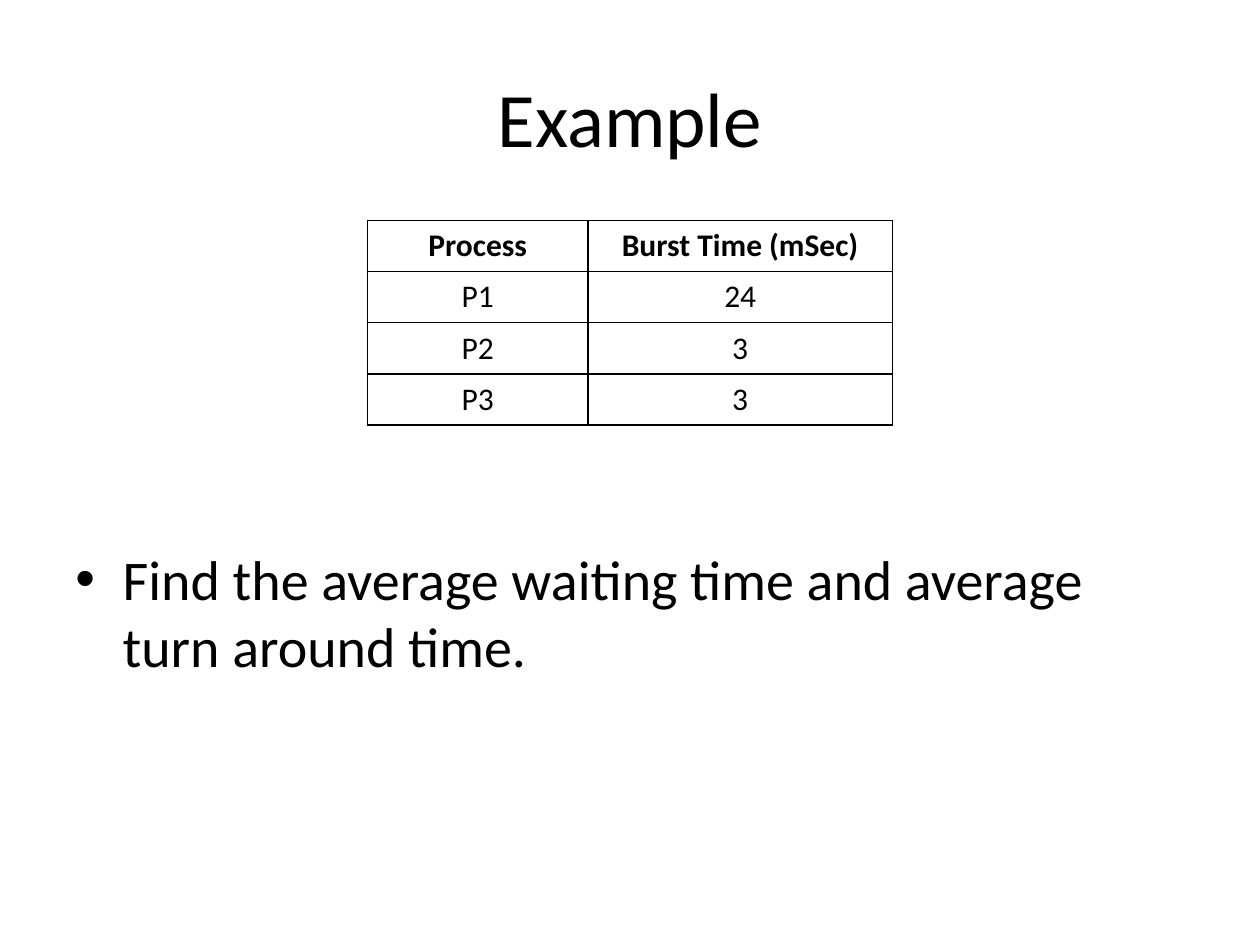
"""Build a scheduling example slide with a burst time table and a question."""
import pptx
import pptx.dml.color
import pptx.enum.text
import pptx.oxml
import pptx.oxml.ns
import pptx.util

Pt = pptx.util.Pt
CENTER = pptx.enum.text.PP_ALIGN.CENTER
MIDDLE = pptx.enum.text.MSO_ANCHOR.MIDDLE
BLACK = pptx.dml.color.RGBColor(0x00, 0x00, 0x00)
FONT = "Calibri"
NS = pptx.oxml.ns.nsdecls("a")
ROWS = [("Process", "Burst Time (mSec)"), ("P1", "24"), ("P2", "3"), ("P3", "3")]
COLUMN_WIDTHS = [126, 174]
ROW_HEIGHT = 29.2


def format_runs(p, size, bold=False):
    """Apply the slide font to every run of a paragraph."""
    for r in p.runs:
        r.font.name = FONT
        r.font.size = Pt(size)
        r.font.bold = bold
        r.font.color.rgb = BLACK


def add_borders(cell):
    """Draw a thin black line on all four sides of a cell."""
    tcPr = cell._tc.get_or_add_tcPr()
    for i, side in enumerate(("lnL", "lnR", "lnT", "lnB")):
        tcPr.insert(i, pptx.oxml.parse_xml(
            f'<a:{side} {NS} w="{Pt(1)}"><a:solidFill>'
            f'<a:srgbClr val="{BLACK}"/></a:solidFill></a:{side}>'))


prs = pptx.Presentation()
prs.slide_width, prs.slide_height = Pt(720), Pt(540)
s = prs.slides.add_slide(prs.slide_layouts[5])

title = s.shapes.title
title.left, title.top, title.width, title.height = Pt(36), Pt(21.6), Pt(648), Pt(90)
tf = title.text_frame
tf.text = "Example"
tf.vertical_anchor = MIDDLE
tf.paragraphs[0].alignment = CENTER
format_runs(tf.paragraphs[0], 44)

table = s.shapes.add_table(
    len(ROWS), len(COLUMN_WIDTHS), Pt(210), Pt(126),
    Pt(sum(COLUMN_WIDTHS)), Pt(ROW_HEIGHT * len(ROWS))).table
table.horz_banding = False
for column, width in zip(table.columns, COLUMN_WIDTHS):
    column.width = Pt(width)
for i, values in enumerate(ROWS):
    table.rows[i].height = Pt(ROW_HEIGHT)
    for j, value in enumerate(values):
        cell = table.cell(i, j)
        cell.fill.background()
        add_borders(cell)
        cell.text_frame.text = value
        p = cell.text_frame.paragraphs[0]
        p.alignment = CENTER
        format_runs(p, 18, bold=i == 0)

question = s.shapes.add_textbox(Pt(36), Pt(126), Pt(648), Pt(356.4))
tf = question.text_frame
tf.word_wrap = True
tf.margin_top = Pt(185)
tf.text = "Find the average waiting time and average turn around time."
p = tf.paragraphs[0]
format_runs(p, 32)
pPr = p._p.get_or_add_pPr()
pPr.set("marL", str(Pt(27)))
pPr.set("indent", str(-Pt(27)))
pPr.append(pptx.oxml.parse_xml(f'<a:buFont {NS} typeface="Arial"/>'))
pPr.append(pptx.oxml.parse_xml(f'<a:buChar {NS} char="•"/>'))

prs.save("out.pptx")
